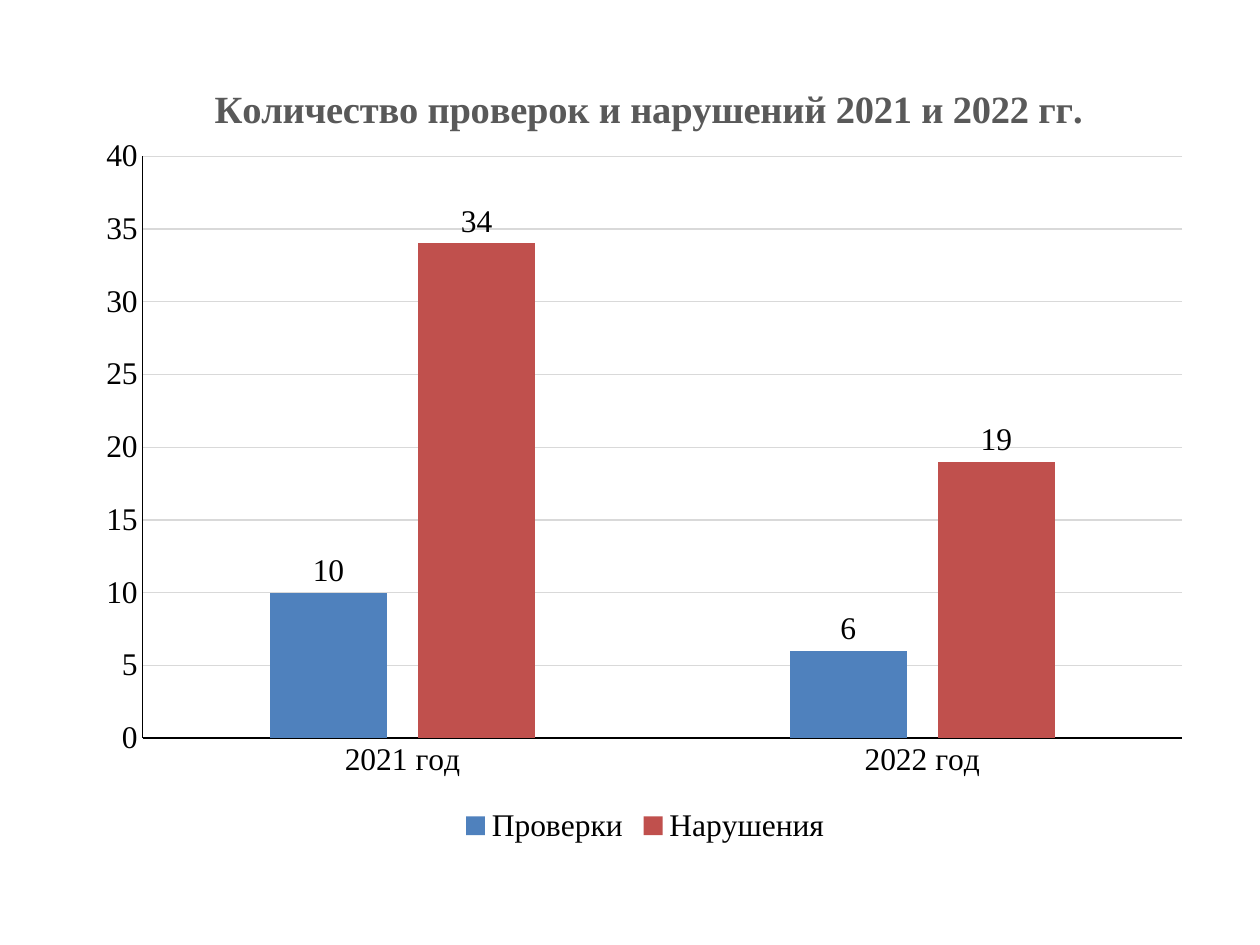
from lxml import etree
from pptx import Presentation
from pptx.chart.data import CategoryChartData
from pptx.dml.color import RGBColor
from pptx.enum.chart import XL_CHART_TYPE, XL_LABEL_POSITION, XL_LEGEND_POSITION, XL_TICK_MARK
from pptx.oxml.ns import qn
from pptx.util import Inches, Pt

COLUMN = XL_CHART_TYPE.COLUMN_CLUSTERED
OUTSIDE = XL_LABEL_POSITION.OUTSIDE_END
BOTTOM = XL_LEGEND_POSITION.BOTTOM
NO_TICK = XL_TICK_MARK.NONE

BLACK = RGBColor(0x00, 0x00, 0x00)
GRAY = RGBColor(0x59, 0x59, 0x59)
PALE = RGBColor(0xD9, 0xD9, 0xD9)
BLUE = RGBColor(0x4F, 0x81, 0xBD)
RED = RGBColor(0xC0, 0x50, 0x4D)


def style(font, size=18, color=BLACK, bold=False):
    font.name = "Times New Roman"
    font.size = Pt(size)
    font.bold = bold
    font.color.rgb = color


def write(frame, text, **form):
    run = frame.paragraphs[0].add_run()
    run.text = text
    style(run.font, **form)


def stroke(line, color):
    line.color.rgb = color
    line.width = Pt(0.75)


def place(parent, index, inner=False, **box):
    for old in parent.findall(qn("c:layout")):
        parent.remove(old)
    layout = etree.Element(qn("c:layout"))
    manual = etree.SubElement(layout, qn("c:manualLayout"))
    parts = {"layoutTarget": "inner"} if inner else {}
    parts.update(xMode="edge", yMode="edge", **box)
    for tag, value in parts.items():
        etree.SubElement(manual, qn(f"c:{tag}")).set("val", str(value))
    parent.insert(index, layout)


class Deck:
    def __init__(self):
        self.file = Presentation()
        self.file.slide_width = Inches(10)
        self.file.slide_height = Inches(7.5)
        self.slide = self.file.slides.add_slide(self.file.slide_layouts[6])

    def chart(self, title, years, groups, left, top, width, height):
        data = CategoryChartData()
        data.categories = years
        for name, values, _ in groups:
            data.add_series(name, values)
        chart = self.slide.shapes.add_chart(
            COLUMN, Inches(left), Inches(top), Inches(width), Inches(height), data
        ).chart
        style(chart.font)
        chart.has_title = True
        write(chart.chart_title.text_frame, title, size=22, color=GRAY, bold=True)
        place(chart.chart_title._element, 1, x=0.11, y=0.04)
        chart.has_legend = True
        chart.legend.position = BOTTOM
        chart.legend.include_in_layout = False
        style(chart.legend.font)
        self.axes(chart)
        self.bars(chart.plots[0], [color for _, _, color in groups])
        area = chart._chartSpace.find(".//" + qn("c:plotArea"))
        place(area, 0, inner=True, x=0.052, y=0.138, w=0.927, h=0.724)

    def axes(self, chart):
        for axis in (chart.category_axis, chart.value_axis):
            axis.major_tick_mark = axis.minor_tick_mark = NO_TICK
            style(axis.tick_labels.font)
            stroke(axis.format.line, BLACK)
        scale = chart.value_axis
        scale.minimum_scale, scale.maximum_scale, scale.major_unit = 0, 40, 5
        stroke(scale.major_gridlines.format.line, PALE)

    def bars(self, plot, colors):
        plot.gap_width = 219
        plot.overlap = -27
        plot.vary_by_categories = False
        for bar, color in zip(plot.series, colors):
            bar.format.fill.solid()
            bar.format.fill.fore_color.rgb = color
            labels = bar.data_labels
            labels.show_value = True
            labels.position = OUTSIDE
            style(labels.font)


def main():
    deck = Deck()
    deck.chart(
        "Количество проверок и нарушений 2021 и 2022 гг.",
        ["2021 год", "2022 год"],
        [("Проверки", (10, 6), BLUE), ("Нарушения", (34, 19), RED)],
        0.67, 0.36, 8.9, 6.38,
    )
    deck.file.save("out.pptx")


if __name__ == "__main__":
    main()
